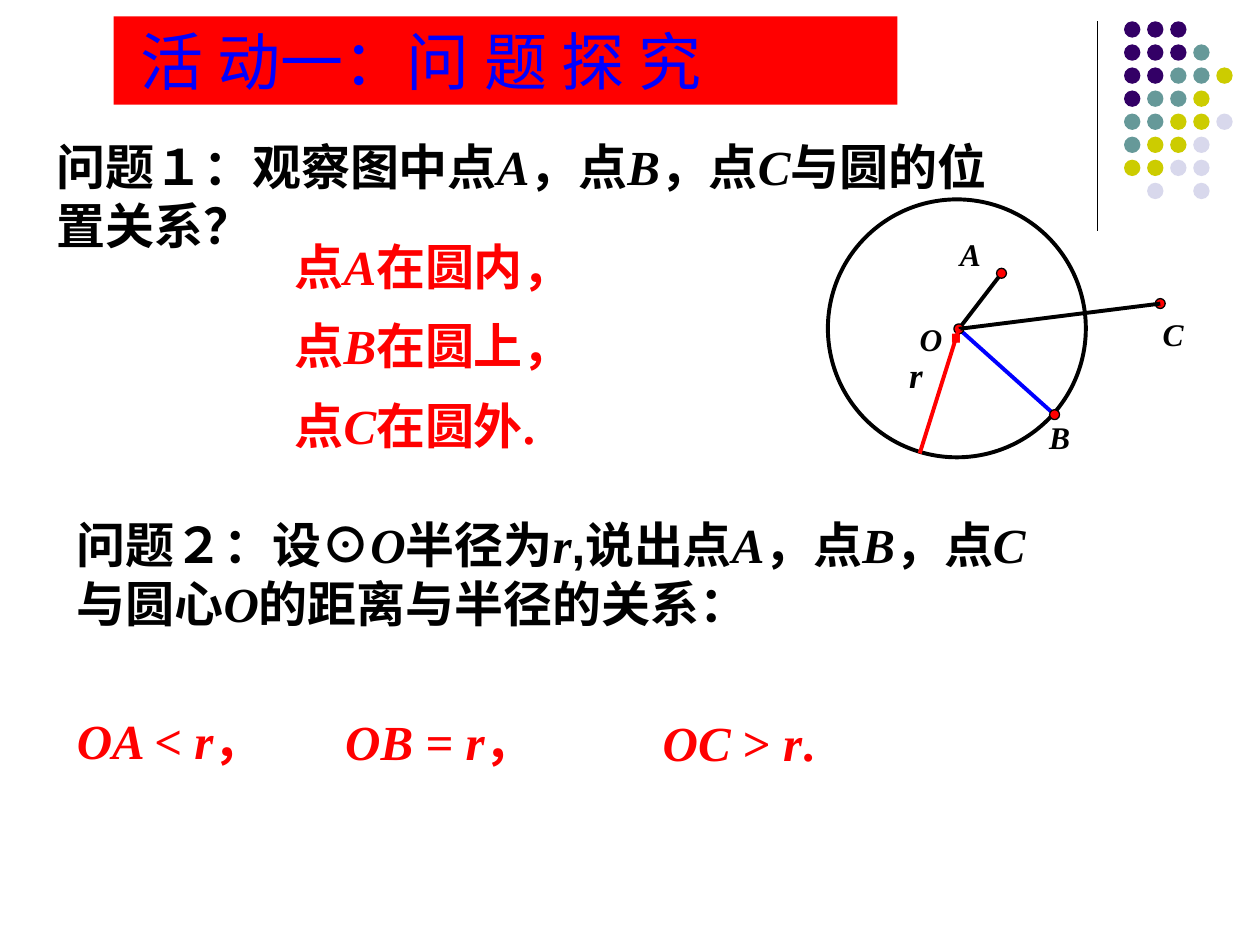
"""Build a geometry slide on points inside, on and outside a circle."""
from lxml import etree
from pptx import Presentation, util as u
from pptx.dml.color import RGBColor
from pptx.enum import shapes, text
from pptx.oxml.ns import qn

BLACK = RGBColor(0, 0, 0)
RED = RGBColor(255, 0, 0)
BLUE = RGBColor(0, 0, 255)
DOT_COLOURS = {
    "P": RGBColor(0x33, 0x00, 0x66),
    "T": RGBColor(0x66, 0x99, 0x99),
    "Y": RGBColor(0xCC, 0xCC, 0x00),
    "L": RGBColor(0xD8, 0xD8, 0xEC),
}
SERIF, SANS, CHINESE = "Times New Roman", "Arial", "Noto Sans CJK SC"
DOT_ROWS = ["PPP", "PPPT", "PPTTY", "PTTY", "TTYYL", "TYYL", "YYLL", " L L"]
DOT_PITCH, DOT_SIZE = 0.465, 0.33
CENTRE_X, CENTRE_Y, RADIUS = 19.29, 6.62, 2.6
POINTS = {"A": (20.19, 5.51), "C": (23.39, 6.12), "O": (19.33, 6.63), "B": (21.26, 8.36)}
RIM = (18.54, 9.14)
POINT_SIZE = 0.2

presentation = Presentation()
presentation.slide_width, presentation.slide_height = u.Cm(25.4), u.Cm(19.05)
slide = presentation.slides.add_slide(presentation.slide_layouts[5])


def add_line(start, end, colour, width):
    line = slide.shapes.add_connector(
        shapes.MSO_CONNECTOR.STRAIGHT, *(u.Cm(value) for value in (*start, *end)))
    line.line.color.rgb = colour
    line.line.width = u.Pt(width)
    etree.SubElement(line._element.spPr, qn("a:effectLst"))


def add_words(left, top, width, height, marked, size, colour, upright=SERIF):
    """Write runs split by bars, alternating upright and italic."""
    frame = slide.shapes.add_textbox(*(u.Cm(v) for v in (left, top, width, height))).text_frame
    frame.word_wrap = True
    paragraph = frame.paragraphs[0]
    for index, words in enumerate(marked.split("|")):
        if words:
            run = paragraph.add_run()
            run.text = words
            run.font.name = SERIF if index % 2 else upright
            run.font.size = u.Pt(size)
            run.font.bold = True
            run.font.italic = bool(index % 2)
            run.font.color.rgb = colour
            etree.SubElement(run.font._element, qn("a:ea"), typeface=CHINESE)
    return frame


title = slide.shapes.title
title.left, title.top, title.width, title.height = u.Cm(2.29), u.Cm(0.33), u.Cm(15.8), u.Cm(1.78)
title.fill.solid()
title.fill.fore_color.rgb = RED
title.text_frame.auto_size = text.MSO_AUTO_SIZE.NONE
title.text_frame.vertical_anchor = text.MSO_ANCHOR.MIDDLE
title.text_frame.margin_left = u.Cm(0.55)
paragraph = title.text_frame.paragraphs[0]
paragraph.alignment = text.PP_ALIGN.LEFT
run = paragraph.add_run()
run.text = "活 动一：问 题 探 究"
run.font.name = CHINESE
run.font.size = u.Pt(36)
run.font.color.rgb = BLUE
etree.SubElement(run.font._element, qn("a:ea"), typeface=CHINESE)

add_line((22.12, 0.43), (22.12, 4.65), BLACK, 0.75)
for row, pattern in enumerate(DOT_ROWS):
    for column, key in enumerate(pattern):
        if key in DOT_COLOURS:
            dot = slide.shapes.add_shape(
                shapes.MSO_SHAPE.OVAL, u.Cm(22.66 + column * DOT_PITCH),
                u.Cm(0.43 + row * DOT_PITCH), u.Cm(DOT_SIZE), u.Cm(DOT_SIZE))
            dot.shadow.inherit = False
            dot.fill.solid()
            dot.fill.fore_color.rgb = DOT_COLOURS[key]
            dot.line.fill.background()

circle = slide.shapes.add_shape(
    shapes.MSO_SHAPE.OVAL, u.Cm(CENTRE_X - RADIUS), u.Cm(CENTRE_Y - RADIUS),
    u.Cm(2 * RADIUS), u.Cm(2 * RADIUS))
circle.shadow.inherit = False
circle.fill.background()
circle.line.color.rgb = BLACK
circle.line.width = u.Pt(2.25)
circle.text_frame.word_wrap = False
circle.text_frame.vertical_anchor = text.MSO_ANCHOR.MIDDLE
paragraph = circle.text_frame.paragraphs[0]
paragraph.alignment = text.PP_ALIGN.CENTER
run = paragraph.add_run()
run.text = "·"
run.font.name = SANS
run.font.size = u.Pt(48)
run.font.color.rgb = RED

add_line(POINTS["O"], POINTS["A"], BLACK, 2.25)
add_line(POINTS["O"], POINTS["B"], BLUE, 2.25)
for x, y in POINTS.values():
    point = slide.shapes.add_shape(
        shapes.MSO_SHAPE.OVAL, u.Cm(x - POINT_SIZE / 2), u.Cm(y - POINT_SIZE / 2),
        u.Cm(POINT_SIZE), u.Cm(POINT_SIZE))
    point.shadow.inherit = False
    point.fill.solid()
    point.fill.fore_color.rgb = RED
    point.line.color.rgb = BLACK
    point.line.width = u.Pt(0.75)
add_line(POINTS["O"], POINTS["C"], BLACK, 2.25)
add_line(POINTS["O"], RIM, RED, 2.25)

for letter, left, top, width, size in [
    ("r", 18.08, 7.01, 1, 20),
    ("C", 23.19, 6.22, 1, 18),
    ("O", 18.29, 6.32, 1.4, 18),
    ("A", 19.1, 4.62, 1.4, 18),
    ("B", 20.9, 8.31, 1.4, 18),
]:
    add_words(left, top, width, 1.02, "|" + letter, size, BLACK)

for left, top, width, height, marked, colour, upright in [
    (0.89, 2.51, 19.41, 2.62, "问题１：观察图中点|A|，点|B|，点|C|与圆的位置关系？", BLACK, SERIF),
    (1.3, 10.13, 20.4, 2.62,
     "问题２：设⊙|O|半径为|r|,说出点|A|，点|B|，点|C|与圆心|O|的距离与半径的关系：", BLACK, SANS),
    (5.69, 4.52, 9.6, 1.45, "点|A|在圆内，", RED, SERIF),
    (5.69, 6.12, 10.21, 1.45, "点|B|在圆上，", RED, SERIF),
    (5.69, 7.72, 8.61, 1.45, "点|C|在圆外.", RED, SERIF),
    (1.3, 14.07, 5, 1.45, "|OA |< |r|，", RED, SERIF),
    (6.71, 14.1, 5, 1.45, "|OB = r|，", RED, SERIF),
    (13.11, 14.12, 5, 1.45, "|OC |> |r|.", RED, SERIF),
]:
    frame = add_words(left, top, width, height, marked, 28, colour, upright)
    frame.margin_top = u.Cm(0.25)
    frame.paragraphs[0].line_spacing = u.Pt(33.5)

presentation.save("out.pptx")
